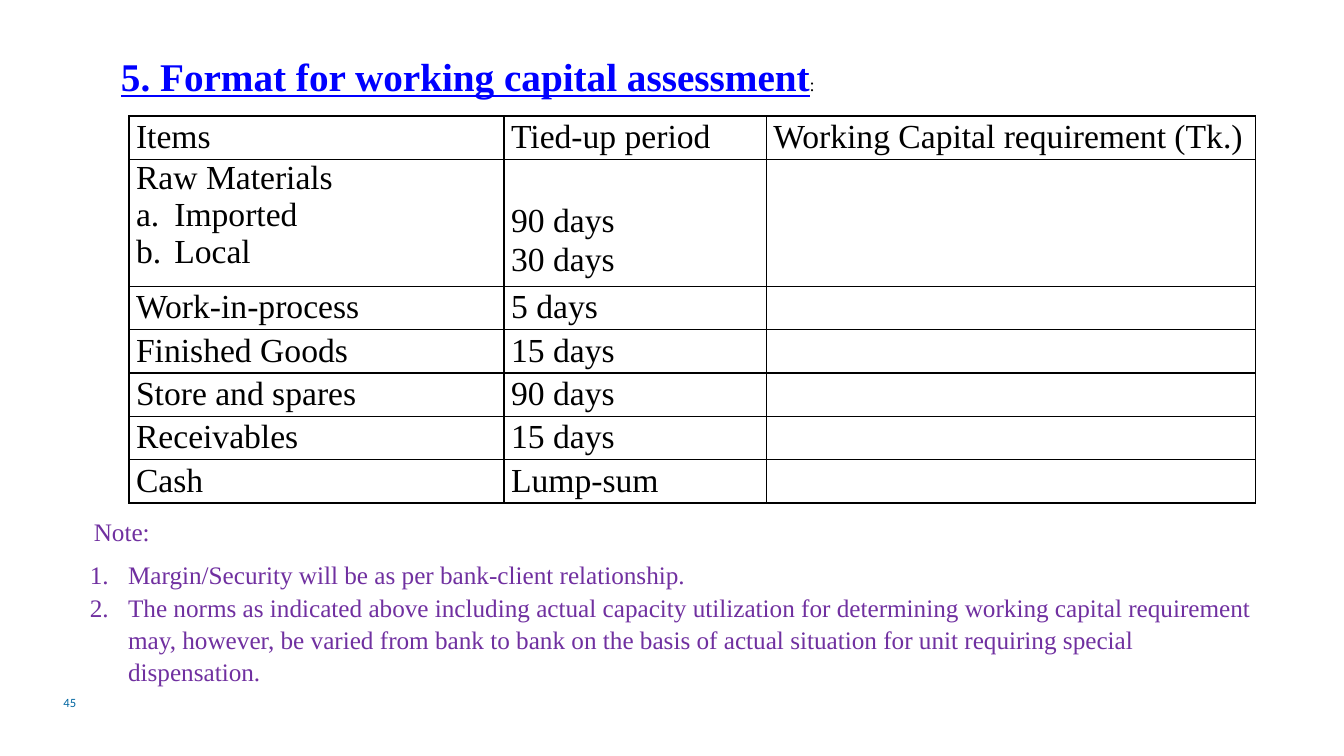
from pptx import Presentation
from pptx.dml.color import RGBColor
from pptx.enum.text import MSO_ANCHOR as ANCHOR, MSO_AUTO_SIZE as AUTO, PP_ALIGN as ALIGN
from pptx.oxml.ns import qn
from pptx.util import Inches, Pt
from lxml.etree import SubElement

COLORS = {"title": "0000FF", "text": "000000", "note": "7030A0", "number": "0066A1"}
SERIF = "Times New Roman"
LINE = 1.07
HEADERS = ["Items", "Tied-up period", "Working Capital requirement (Tk.)"]
ITEMS = [
    ("Raw Materials\nImported\nLocal", "90 days\n30 days"),
    ("Work-in-process", "5 days"),
    ("Finished Goods", "15 days"),
    ("Store and spares", "90 days"),
    ("Receivables", "15 days"),
    ("Cash", "Lump-sum"),
]
NOTES = [
    "Note:",
    "Margin/Security will be as per bank-client relationship.",
    "The norms as indicated above including actual capacity utilization for "
    "determining working capital requirement may, however, be varied from bank "
    "to bank on the basis of actual situation for unit requiring special dispensation.",
]


def place(sp, left, top, width, height):
    sp.left, sp.top = Inches(left), Inches(top)
    sp.width, sp.height = Inches(width), Inches(height)


def style_run(r, size, color, font=SERIF):
    r.font.size, r.font.name = Pt(size), font
    r.font.color.rgb = RGBColor.from_string(COLORS[color])


def style_paragraph(p, size, color, spacing=LINE, after=0):
    p.alignment = ALIGN.LEFT
    p.line_spacing = spacing
    p.space_before, p.space_after = Pt(0), Pt(after)
    for r in p.runs:
        style_run(r, size, color)


def set_bullet(p, left, indent=0, scheme=None):
    pPr = p._p.get_or_add_pPr()
    pPr.set("marL", str(Inches(left)))
    pPr.set("indent", str(Inches(indent)))
    if scheme:
        SubElement(pPr, qn("a:buFont"), typeface="+mj-lt")
        SubElement(pPr, qn("a:buAutoNum"), type=scheme)
    else:
        SubElement(pPr, qn("a:buNone"))


def set_borders(cell):
    tcPr = cell._tc.get_or_add_tcPr()
    for side in ("lnL", "lnR", "lnT", "lnB"):
        ln = SubElement(tcPr, qn("a:" + side), w=str(Pt(1)))
        fill = SubElement(ln, qn("a:solidFill"))
        SubElement(fill, qn("a:srgbClr"), val=COLORS["text"])


def add_title(slide):
    sp = slide.shapes.title
    place(sp, 1.1, 0.44, 7.21, 0.61)
    tf = sp.text_frame
    tf.word_wrap, tf.auto_size = False, AUTO.NONE
    tf.vertical_anchor = ANCHOR.TOP
    p = tf.paragraphs[0]
    p.text = "5. Format for working capital assessment"
    style_paragraph(p, 28, "title", after=8)
    p.runs[0].font.bold = p.runs[0].font.underline = True
    r = p.add_run()
    r.text = ":"
    style_run(r, 13, "text")


def fill_cell(cell, text):
    cell.margin_left = cell.margin_right = Inches(0.07)
    cell.margin_top = cell.margin_bottom = 0
    set_borders(cell)
    cell.fill.background()
    cell.text_frame.text = text
    for p in cell.text_frame.paragraphs:
        style_paragraph(p, 24, "text")


def add_capital_table(slide):
    rows = [HEADERS] + [(item, period, "") for item, period in ITEMS]
    frame = slide.shapes.add_table(len(rows), len(HEADERS), Inches(1.28), Inches(1.15),
                                   Inches(11.17), Inches(3.85))
    table = frame.table
    table.first_row = table.horz_banding = False
    for col, width in zip(table.columns, (3.72, 2.6, 4.85)):
        col.width = Inches(width)
    for i, row in enumerate(rows):
        table.rows[i].height = Inches(1.26 if i == 1 else 0.43)
        for j, text in enumerate(row):
            fill_cell(table.cell(i, j), text)
    materials = table.cell(1, 0).text_frame.paragraphs
    for p in materials:
        p.line_spacing = 1.0
    for p in materials[1:]:
        set_bullet(p, 0.38, -0.38, "alphaLcPeriod")
    table.cell(1, 1).margin_top = Inches(0.4)


def add_notes_list(slide):
    sp = slide.placeholders[1]
    place(sp, 0.79, 5.05, 11.9, 1.82)
    tf = sp.text_frame
    tf.text = "\n".join(NOTES)
    tf.auto_size = AUTO.NONE
    for p, after in zip(tf.paragraphs, (8, 0, 8)):
        style_paragraph(p, 18, "note", after=after)
    heading, *points = tf.paragraphs
    set_bullet(heading, 0.04)
    for p in points:
        set_bullet(p, 0.38, -0.38, "arabicPeriod")


def add_page_number(slide):
    sp = slide.shapes.add_textbox(Inches(0.56), Inches(6.77), Inches(3), Inches(0.4))
    tf = sp.text_frame
    tf.word_wrap = True
    tf.vertical_anchor = ANCHOR.MIDDLE
    tf.margin_left = tf.margin_right = Inches(0.07)
    tf.margin_top = tf.margin_bottom = Inches(0.04)
    tf.text = "45"
    style_run(tf.paragraphs[0].runs[0], 9, "number", "Calibri")


def main():
    prs = Presentation()
    prs.slide_width, prs.slide_height = Inches(13.33), Inches(7.5)
    slide = prs.slides.add_slide(prs.slide_layouts[1])
    add_page_number(slide)
    add_title(slide)
    add_capital_table(slide)
    add_notes_list(slide)
    prs.save("out.pptx")


if __name__ == "__main__":
    main()
